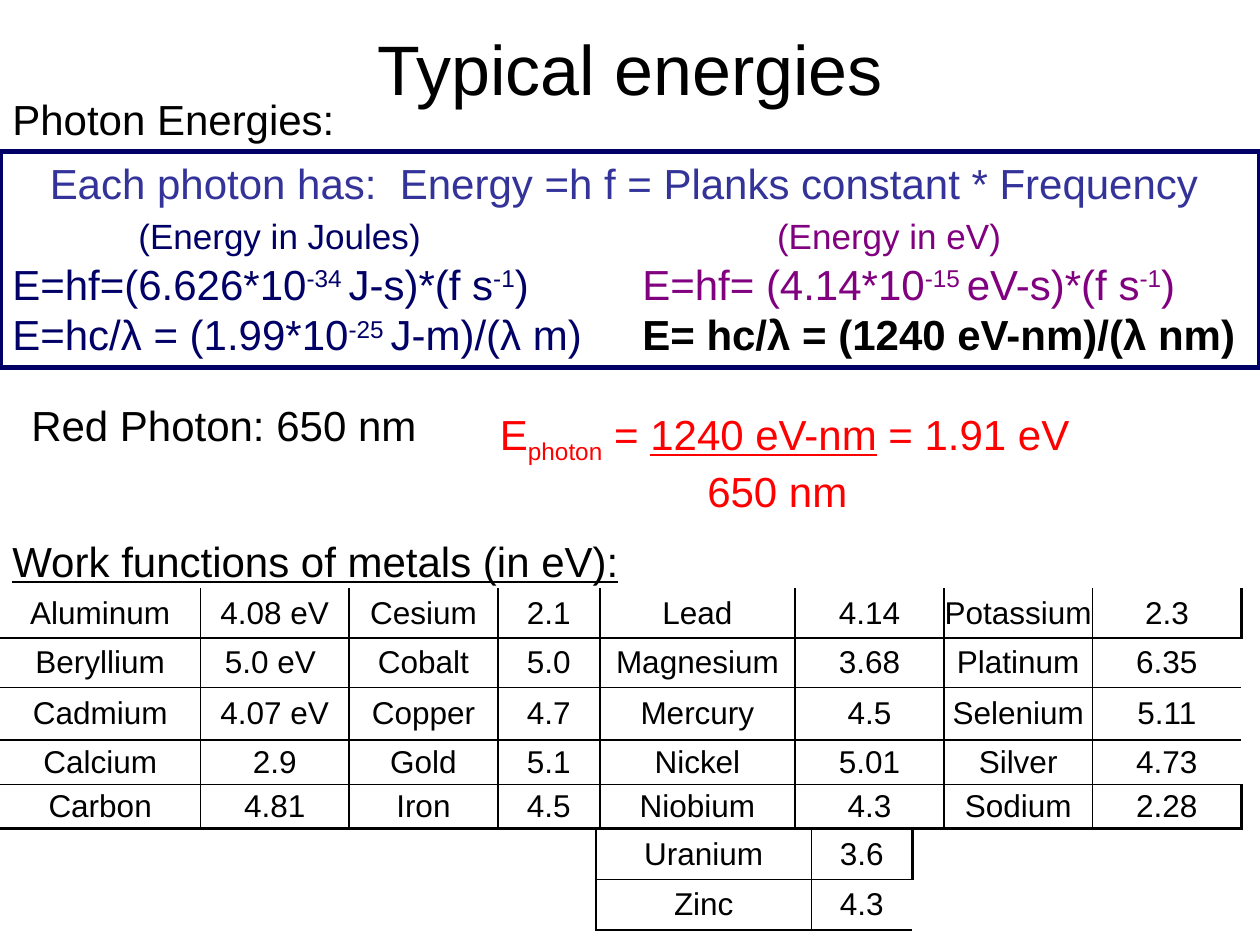
from dataclasses import dataclass

from lxml.etree import SubElement
from pptx import Presentation
from pptx.dml.color import RGBColor
from pptx.enum.shapes import MSO_SHAPE
from pptx.enum.text import MSO_ANCHOR, MSO_AUTO_SIZE, PP_ALIGN
from pptx.oxml import parse_xml
from pptx.oxml.ns import nsdecls, qn
from pptx.util import Pt


@dataclass(frozen=True)
class Theme:
    font: str = "Arial"
    title: float = 40
    body: float = 24
    label: float = 20
    cell: float = 18
    thin: float = 1
    thick: float = 2.25
    frame: float = 3
    black: str = "000000"
    red: str = "FF0000"
    navy: str = "000066"
    indigo: str = "333399"
    purple: str = "800080"


T = Theme()
SUP, SUB = 30, -25

METALS = [
    "Aluminum|4.08 eV|Cesium|2.1|Lead|4.14|Potassium|2.3",
    "Beryllium|5.0 eV |Cobalt|5.0|Magnesium|3.68|Platinum|6.35",
    "Cadmium|4.07 eV|Copper|4.7|Mercury|4.5|Selenium|5.11",
    "Calcium|2.9|Gold|5.1|Nickel|5.01|Silver|4.73",
    "Carbon|4.81|Iron|4.5|Niobium|4.3|Sodium|2.28",
]
MORE_METALS = ["Uranium|3.6", "Zinc|4.3"]


def place(box):
    return [Pt(v) for v in box]


def add_run(p, text, color=T.black, size=T.body, base=0, **fmt):
    r = p.add_run()
    r.text = text
    for name, value in {"name": T.font, "size": Pt(size), **fmt}.items():
        setattr(r.font, name, value)
    r.font.color.rgb = RGBColor.from_string(color)
    if base:
        r.font._element.set("baseline", str(base * 1000))


def set_tabs(p, stops):
    tabs = SubElement(p._p.get_or_add_pPr(), qn("a:tabLst"))
    for stop in stops:
        SubElement(tabs, qn("a:tab"), pos=str(Pt(stop)), algn="l")


def fill_text(tf, lines):
    """Each line is (alignment, tab stops, runs); a run is (text, format)."""
    for i, (align, stops, runs) in enumerate(lines):
        p = tf.paragraphs[0] if i == 0 else tf.add_paragraph()
        p.alignment = align
        if stops:
            set_tabs(p, stops)
        for text, fmt in runs:
            add_run(p, text, **fmt)


def add_title(s, box, text):
    sp = s.shapes.title
    sp.left, sp.top, sp.width, sp.height = place(box)
    tf = sp.text_frame
    tf.auto_size = MSO_AUTO_SIZE.NONE
    tf.vertical_anchor = MSO_ANCHOR.MIDDLE
    fill_text(tf, [(PP_ALIGN.CENTER, (), [(text, {"size": T.title})])])


def add_text(s, box, lines):
    tf = s.shapes.add_textbox(*place(box)).text_frame
    tf.word_wrap = False
    fill_text(tf, lines)


def add_label(s, box, text, **fmt):
    add_text(s, box, [(PP_ALIGN.LEFT, (), [(text, fmt)])])


def add_formulas(s, box):
    """Framed formulas: joules on the left, electronvolts on the right."""
    sp = s.shapes.add_shape(MSO_SHAPE.RECTANGLE, *place(box))
    sp.shadow.inherit = False
    sp.fill.background()
    sp.line.color.rgb = RGBColor.from_string(T.navy)
    sp.line.width = Pt(T.frame)
    tf = sp.text_frame
    tf.word_wrap = True
    tf.vertical_anchor = MSO_ANCHOR.TOP
    half = box[2] / 2
    navy, purple = {"color": T.navy}, {"color": T.purple}
    navy_sup, purple_sup = {**navy, "base": SUP}, {**purple, "base": SUP}
    left = PP_ALIGN.LEFT
    fill_text(tf, [
        (PP_ALIGN.CENTER, (), [
            ("Each photon has:  Energy =h f = Planks constant * Frequency ",
             {"color": T.indigo})]),
        (left, (72, half + 77), [
            ("\t", {}), ("(Energy in Joules)", {**navy, "size": T.label}),
            ("\t", {}), ("(Energy in eV)", {**purple, "size": T.label})]),
        (left, (half,), [
            ("E=hf=(6.626*10", navy), ("-34 ", navy_sup), ("J-s)*(f s", navy),
            ("-1", navy_sup), (")\t", navy),
            ("E=hf= (4.14*10", purple), ("-15 ", purple_sup),
            ("eV-s)*(f s", purple), ("-1", purple_sup), (")", purple)]),
        (left, (half,), [
            ("E=hc/λ = (1.99*10", navy), ("-25 ", navy_sup),
            ("J-m)/(λ m)\t", navy),
            ("E= hc/λ = (1240 eV-nm)/(λ nm)", {"bold": True})]),
    ])


def add_red_photon(s, box):
    """Worked example, with the divisor tabbed under the underlined part."""
    red = {"color": T.red}
    add_text(s, box, [
        (PP_ALIGN.LEFT, (), [
            ("E", red), ("photon", {**red, "base": SUB}), (" = ", red),
            ("1240 eV-nm", {**red, "underline": True}), (" = 1.91 eV", red)]),
        (PP_ALIGN.LEFT, (118.5,), [("\t650 nm", red)]),
    ])


def set_borders(cell, widths):
    """Widths run left, right, top, bottom; zero means no line."""
    tc_pr = cell._tc.get_or_add_tcPr()
    for i, (side, width) in enumerate(zip("LRTB", widths)):
        paint = (f'<a:solidFill><a:srgbClr val="{T.black}"/></a:solidFill>'
                 if width else "<a:noFill/>")
        tc_pr.insert(i, parse_xml(
            f'<a:ln{side} {nsdecls("a")} w="{Pt(width)}">{paint}</a:ln{side}>'))


def add_metals(s, box, rows, widths, heights, borders, margin=None):
    data = [row.split("|") for row in rows]
    frame = s.shapes.add_table(len(data), len(widths), *place(box))
    table = frame.table
    table.first_row = table.horz_banding = False
    for col, width in zip(table.columns, widths):
        col.width = Pt(width)
    for row, height in zip(table.rows, heights):
        row.height = Pt(height)
    for i, values in enumerate(data):
        for j, value in enumerate(values):
            cell = table.cell(i, j)
            cell.fill.background()
            cell.vertical_anchor = MSO_ANCHOR.MIDDLE
            if margin is not None:
                for side in ("left", "right", "top", "bottom"):
                    setattr(cell, f"margin_{side}", Pt(margin))
            fill_text(cell.text_frame,
                      [(PP_ALIGN.CENTER, (), [(value, {"size": T.cell})])])
            set_borders(cell, borders(i, j))


def main_borders(i, j):
    """Open at left and top; the right edge shows in the end rows only."""
    right = T.thin if j < 7 else T.thick if i in (0, 4) else 0
    return (T.thin if j else 0, right, T.thin if i else 0,
            T.thick if i == 4 else T.thin)


def extra_borders(i, j):
    right = T.thin if j == 0 else T.thick if i == 0 else 0
    return T.thin, right, T.thin if i else 0, T.thin


def build_energies(prs):
    s = prs.slides.add_slide(prs.slide_layouts[5])
    # Headings
    add_title(s, (36, 21.6, 648, 34.5), "Typical energies")
    add_label(s, (0, 49.7, 205, 36), "Photon Energies:")
    add_label(s, (0, 302.4, 374, 36), "Work functions of metals (in eV):",
              underline=True)
    # Work functions
    add_metals(s, (0, 336.2, 708.5, 137.5), METALS,
               (114.5, 85, 85, 58.3, 111.6, 85, 85, 85),
               (28.3, 28.3, 30.2, 25.2, 25.2), main_borders, margin=0)
    add_metals(s, (340.6, 473.8, 180.7, 57.6), MORE_METALS,
               (123.1, 57.6), (28.8, 28.8), extra_borders)
    # Red photon example
    add_label(s, (10.8, 224.6, 235, 36), "Red Photon: 650 nm")
    add_red_photon(s, (278.6, 229.7, 348, 65))
    # Formulas
    add_formulas(s, (0, 86.4, 720, 123.8))


def main():
    prs = Presentation()
    prs.slide_width, prs.slide_height = Pt(720), Pt(540)
    build_energies(prs)
    prs.save("out.pptx")


if __name__ == "__main__":
    main()
